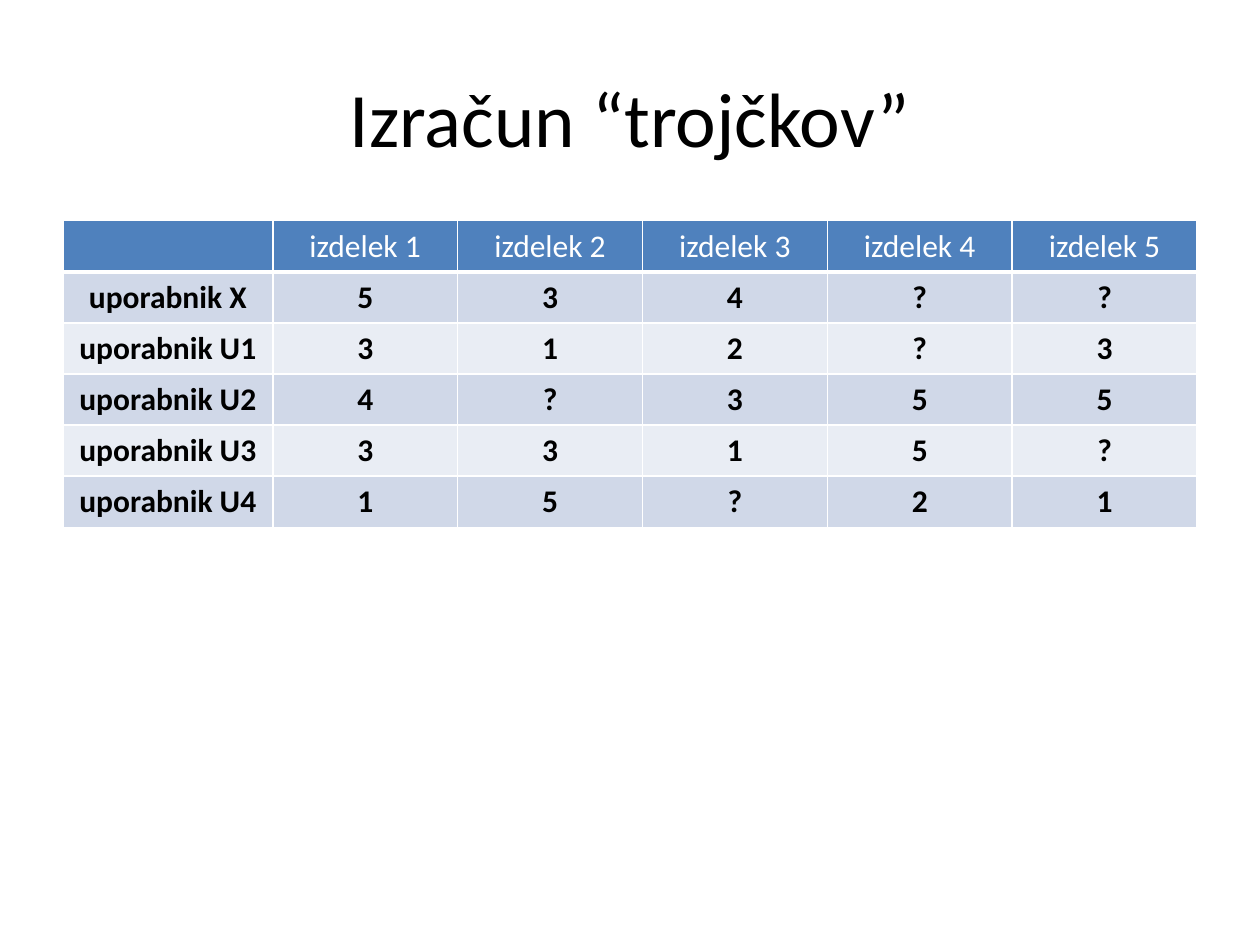
from dataclasses import dataclass

from lxml import etree
from pptx import Presentation
from pptx import util as u
from pptx.dml.color import RGBColor
from pptx.enum import text
from pptx.oxml import ns


@dataclass(frozen=True)
class Theme:
    font: str = "Calibri"
    title_size: int = 44
    cell_size: int = 18
    ink: str = "000000"
    header_ink: str = "FFFFFF"
    header_fill: str = "4F81BD"
    band_fills: tuple = ("D0D8E8", "E9EDF4")
    border: str = "FFFFFF"
    border_width: int = 1
    header_border_width: int = 3


THEME = Theme()
LEFT, WIDTH = 1.27, 22.86
USER_COLUMN, ROW_HEIGHT = 4.23, 1.03
HEADER = [""] + [f"izdelek {number}" for number in range(1, 6)]
RATINGS = {
    "uporabnik X": "534??",
    "uporabnik U1": "312?3",
    "uporabnik U2": "4?355",
    "uporabnik U3": "3315?",
    "uporabnik U4": "15?21",
}


def write_text(frame, content, *, size, color, bold=False):
    paragraph = frame.paragraphs[0]
    paragraph.alignment = text.PP_ALIGN.CENTER
    paragraph.font.size = u.Pt(size)
    if content:
        run = paragraph.add_run()
        run.text = content
        run.font.name = THEME.font
        run.font.size = u.Pt(size)
        run.font.bold = bold
        run.font.color.rgb = RGBColor.from_string(color)


def add_title(slide, content):
    box = slide.shapes.add_textbox(u.Cm(LEFT), u.Cm(0.76), u.Cm(WIDTH), u.Cm(3.18))
    frame = box.text_frame
    frame.word_wrap = True
    frame.vertical_anchor = text.MSO_ANCHOR.MIDDLE
    write_text(frame, content, size=THEME.title_size, color=THEME.ink)


def set_borders(cell, bottom_width):
    properties = cell._tc.get_or_add_tcPr()
    for side in "LRTB":
        width = bottom_width if side == "B" else THEME.border_width
        line = etree.SubElement(properties, ns.qn(f"a:ln{side}"), w=str(u.Pt(width)))
        fill = etree.SubElement(line, ns.qn("a:solidFill"))
        etree.SubElement(fill, ns.qn("a:srgbClr"), val=THEME.border)


def format_cell(cell, content, *, fill, color, bold, bottom_width):
    set_borders(cell, bottom_width)
    cell.fill.solid()
    cell.fill.fore_color.rgb = RGBColor.from_string(fill)
    write_text(cell.text_frame, content, size=THEME.cell_size, color=color, bold=bold)


def add_ratings_table(slide):
    rows = [HEADER] + [[user, *ratings] for user, ratings in RATINGS.items()]
    table = slide.shapes.add_table(
        len(rows), len(HEADER), u.Cm(LEFT), u.Cm(4.45),
        u.Cm(WIDTH), u.Cm(ROW_HEIGHT * len(rows)),
    ).table
    item_column = (WIDTH - USER_COLUMN) / (len(HEADER) - 1)
    for index, column in enumerate(table.columns):
        column.width = u.Cm(item_column if index else USER_COLUMN)
    for row_index, values in enumerate(rows):
        table.rows[row_index].height = u.Cm(ROW_HEIGHT)
        if row_index == 0:
            style = dict(fill=THEME.header_fill, color=THEME.header_ink, bold=False,
                         bottom_width=THEME.header_border_width)
        else:
            style = dict(fill=THEME.band_fills[(row_index - 1) % 2], color=THEME.ink,
                         bold=True, bottom_width=THEME.border_width)
        for column_index, value in enumerate(values):
            format_cell(table.cell(row_index, column_index), value, **style)


def main():
    presentation = Presentation()
    presentation.slide_width = u.Cm(25.4)
    presentation.slide_height = u.Cm(19.05)
    slide = presentation.slides.add_slide(presentation.slide_layouts[6])
    add_title(slide, "Izračun “trojčkov”")
    add_ratings_table(slide)
    presentation.save("out.pptx")


if __name__ == "__main__":
    main()
